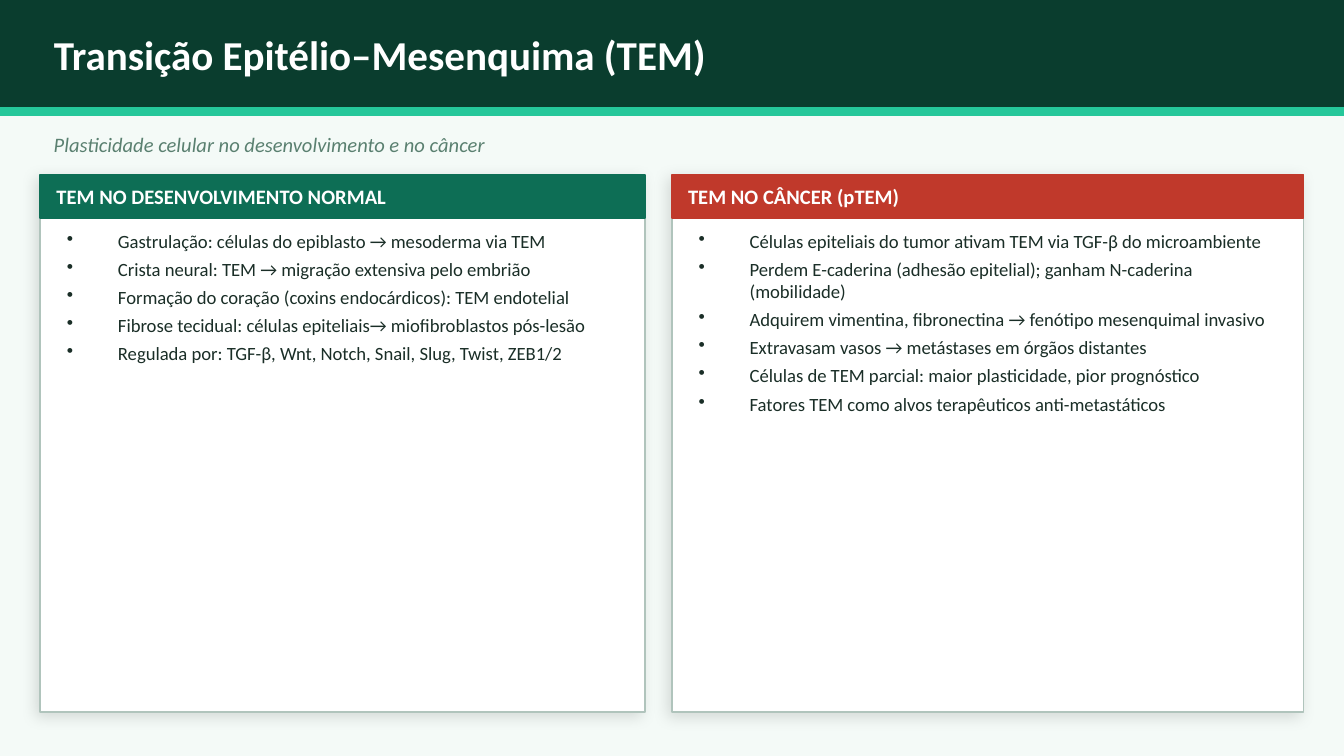
from dataclasses import dataclass

from lxml.etree import SubElement
from pptx import Presentation
from pptx.dml.color import RGBColor as RGB
from pptx.enum.shapes import MSO_SHAPE as Preset
from pptx.enum.text import MSO_ANCHOR as Anchor, MSO_AUTO_SIZE as AutoSize, PP_ALIGN as Align
from pptx.oxml.ns import qn
from pptx.shapes.autoshape import Shape
from pptx.slide import Slide
from pptx.util import Pt


@dataclass(frozen=True)
class Theme:
    font: str = "Calibri"
    background: str = "F4FAF7"
    band: str = "0A3D2E"
    accent: str = "25C79A"
    subtitle: str = "5A8070"
    white: str = "FFFFFF"
    border: str = "B0C4BC"
    body: str = "1A2E27"
    normal: str = "0D6E55"
    cancer: str = "C0392B"
    title_size: int = 22
    heading_size: int = 11
    body_size: int = 10


@dataclass(frozen=True)
class Box:
    left: float
    top: float
    width: float
    height: float

    def lengths(self) -> tuple:
        return Pt(self.left), Pt(self.top), Pt(self.width), Pt(self.height)


@dataclass(frozen=True)
class Panel:
    heading: str
    color: str
    left: float
    width: float
    points: tuple[str, ...]


THEME = Theme()
SLIDE_WIDTH, SLIDE_HEIGHT = 720, 405
MARGIN = 28.8
PANEL_TOP, PANEL_HEIGHT, HEADING_HEIGHT = 93.6, 288, 23.04
BULLET_INDENT = 27.36

PANELS = (
    Panel("TEM NO DESENVOLVIMENTO NORMAL", THEME.normal, 21.6, 324, (
        "Gastrulação: células do epiblasto → mesoderma via TEM",
        "Crista neural: TEM → migração extensiva pelo embrião",
        "Formação do coração (coxins endocárdicos): TEM endotelial",
        "Fibrose tecidual: células epiteliais→ miofibroblastos pós-lesão",
        "Regulada por: TGF-β, Wnt, Notch, Snail, Slug, Twist, ZEB1/2",
    )),
    Panel("TEM NO CÂNCER (pTEM)", THEME.cancer, 360, 338.4, (
        "Células epiteliais do tumor ativam TEM via TGF-β do microambiente",
        "Perdem E-caderina (adhesão epitelial); ganham N-caderina (mobilidade)",
        "Adquirem vimentina, fibronectina → fenótipo mesenquimal invasivo",
        "Extravasam vasos → metástases em órgãos distantes",
        "Células de TEM parcial: maior plasticidade, pior prognóstico",
        "Fatores TEM como alvos terapêuticos anti-metastáticos",
    )),
)


def style(paragraph, size: float, color: str, bold: bool = False, italic: bool = False) -> None:
    font = paragraph.font
    font.name, font.size = THEME.font, Pt(size)
    font.bold, font.italic = bold, italic
    font.color.rgb = RGB.from_string(color)


def add_rect(slide: Slide, box: Box, fill: str, line: str) -> Shape:
    rect = slide.shapes.add_shape(Preset.RECTANGLE, *box.lengths())
    rect.fill.solid()
    rect.fill.fore_color.rgb = RGB.from_string(fill)
    rect.line.color.rgb = RGB.from_string(line)
    rect.line.width = Pt(1)
    rect.shadow.inherit = False
    return rect


def add_soft_shadow(shape: Shape) -> None:
    effects = shape.element.spPr.find(qn("a:effectLst"))
    shadow = SubElement(effects, qn("a:outerShdw"), blurRad=str(Pt(8)), dist=str(Pt(3)),
                        dir=str(135 * 60000), algn="bl", rotWithShape="0")
    black = SubElement(shadow, qn("a:srgbClr"), val="000000")
    SubElement(black, qn("a:alpha"), val="12000")


def set_line(shape: Shape, text: str, size: float, color: str,
             bold: bool = False, italic: bool = False) -> None:
    """Fill a shape with one left-aligned, vertically centred line."""
    frame = shape.text_frame
    frame.word_wrap, frame.auto_size = True, AutoSize.NONE
    frame.vertical_anchor = Anchor.MIDDLE
    frame.margin_left = frame.margin_right = frame.margin_top = frame.margin_bottom = 0
    frame.text = text
    frame.paragraphs[0].alignment = Align.LEFT
    style(frame.paragraphs[0], size, color, bold, italic)


def add_bullets(slide: Slide, box: Box, points: tuple[str, ...]) -> None:
    frame = slide.shapes.add_textbox(*box.lengths()).text_frame
    frame.word_wrap = True
    frame.text = "\n".join(points)
    for paragraph in frame.paragraphs:
        properties = paragraph._p.get_or_add_pPr()
        properties.set("marL", str(Pt(BULLET_INDENT)))
        properties.set("indent", str(-Pt(BULLET_INDENT)))
        SubElement(properties, qn("a:buChar"), char="•")
        paragraph.space_after = Pt(3)
        style(paragraph, THEME.body_size, THEME.body)


def add_header(slide: Slide) -> None:
    add_rect(slide, Box(0, 0, SLIDE_WIDTH, 57.6), THEME.band, THEME.band)
    add_rect(slide, Box(0, 57.6, SLIDE_WIDTH, 4.32), THEME.accent, THEME.accent)

    # The title placeholder goes in front of the band
    text_width = SLIDE_WIDTH - 2 * MARGIN
    title = slide.shapes.title
    title.element.getparent().append(title.element)
    title.left, title.top, title.width, title.height = Box(
        MARGIN, 2.88, text_width, 51.84).lengths()
    set_line(title, "Transição Epitélio–Mesenquima (TEM)",
             THEME.title_size, THEME.white, bold=True)

    subtitle = slide.shapes.add_textbox(*Box(MARGIN, 64.8, text_width, 25.2).lengths())
    set_line(subtitle, "Plasticidade celular no desenvolvimento e no câncer",
             THEME.heading_size, THEME.subtitle, italic=True)


def add_panel(slide: Slide, panel: Panel) -> None:
    # Card and coloured heading bar
    card = add_rect(slide, Box(panel.left, PANEL_TOP, panel.width, PANEL_HEIGHT),
                    THEME.white, THEME.border)
    add_soft_shadow(card)
    add_rect(slide, Box(panel.left, PANEL_TOP, panel.width, HEADING_HEIGHT),
             panel.color, panel.color)

    # Heading and bullet list
    heading = slide.shapes.add_textbox(*Box(
        panel.left + 8.64, PANEL_TOP, panel.width - 10.08, HEADING_HEIGHT).lengths())
    set_line(heading, panel.heading, THEME.heading_size, THEME.white, bold=True)
    add_bullets(slide, Box(panel.left + 7.2, PANEL_TOP + 25.92, panel.width - 14.4, 257.76),
                panel.points)


def main() -> None:
    deck = Presentation()
    deck.slide_width, deck.slide_height = Pt(SLIDE_WIDTH), Pt(SLIDE_HEIGHT)
    slide = deck.slides.add_slide(deck.slide_layouts.get_by_name("Title Only"))
    slide.background.fill.solid()
    slide.background.fill.fore_color.rgb = RGB.from_string(THEME.background)
    add_header(slide)
    for panel in PANELS:
        add_panel(slide, panel)
    deck.save("out.pptx")


if __name__ == "__main__":
    main()
